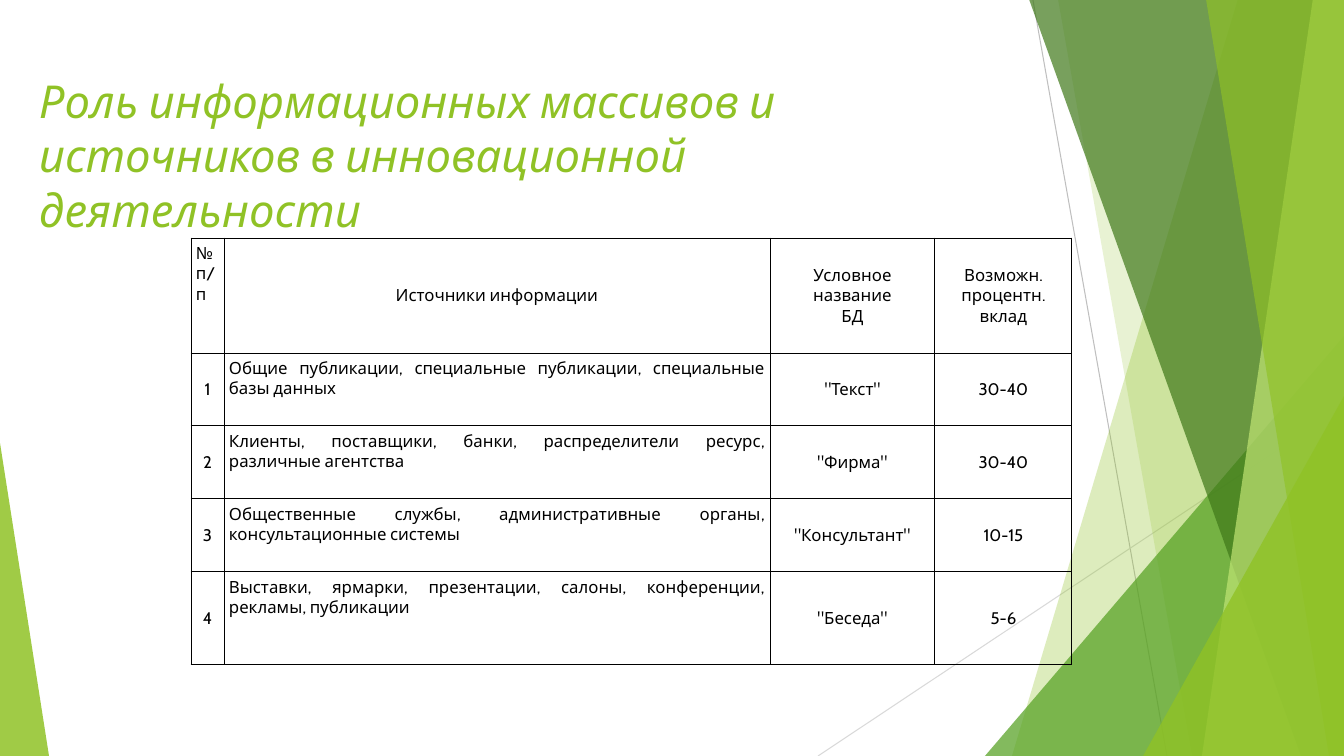
from lxml import etree
from pptx import Presentation
from pptx.dml.color import RGBColor
from pptx.enum.shapes import MSO_CONNECTOR, MSO_SHAPE
from pptx.enum.text import MSO_ANCHOR, PP_ALIGN
from pptx.oxml.ns import qn
from pptx.util import Emu, Pt

PX = 914400 / 100.8
WIDTH, HEIGHT = 1344, 756
FONT = "Cabin"
LEFT, CENTER, JUSTIFY = PP_ALIGN.LEFT, PP_ALIGN.CENTER, PP_ALIGN.JUSTIFY
TOP, MIDDLE = MSO_ANCHOR.TOP, MSO_ANCHOR.MIDDLE

COLORS = {
    "lime": "90C226", "green": "54A021", "dark": "3F7819", "pale": "C0E474",
    "gray": "BFBFBF", "light_gray": "D9D9D9", "black": "000000",
}

TITLE = "Роль информационных массивов и источников в инновационной деятельности"
TITLE_BOX = (29, 68, 993, 145)

SOURCES = [
    ("№\nп/п", "Источники информации", "Условное\nназвание\nБД", "Возможн.\nпроцентн.\nвклад"),
    ("1", "Общие публикации, специальные публикации, специальные базы данных",
     '"Текст"', "30-40"),
    ("2", "Клиенты, поставщики, банки, распределители ресурс, различные агентства",
     '"Фирма"', "30-40"),
    ("3", "Общественные службы, административные органы, консультационные системы",
     '"Консультант"', "10-15"),
    ("4", "Выставки, ярмарки, презентации, салоны, конференции, рекламы, публикации",
     '"Беседа"', "5-6"),
]
TABLE_AT = (191, 238)
COLUMN_WIDTHS = (33, 546, 165, 137)
ROW_HEIGHTS = (115, 73, 73, 73, 93)
CELL_INSET = 5

RAYS = [((1033, 0), (1167, 756), "gray"), ((1344, 406), (818, 756), "light_gray")]

# Blade: x at the top, x at the bottom; triangle: left, top, width, height, apex
FACETS = [
    ("blade", (1238, 1012), "lime", 30),
    ("blade", (1058, 1192), "lime", 20),
    ("triangle", (985, 336, 359, 420, 1), "green", 72),
    ("blade", (1029, 1301), "dark", 70),
    ("blade", (1313, 1202), "pale", 70),
    ("blade", (1206, 1329), "lime", 65),
    ("triangle", (1143, 396, 201, 360, 1), "lime", 80),
    ("triangle", (0, 443, 49, 313, 0), "lime", 85),
]


def px(*lengths):
    return [Emu(round(length * PX)) for length in lengths]


def rgb(name):
    return RGBColor.from_string(COLORS[name])


def write(frame, text, size, color, align=LEFT, italic=False):
    """Fill a text frame, one paragraph for each line of text."""
    frame.word_wrap = True
    for i, line in enumerate(text.split("\n")):
        paragraph = frame.add_paragraph() if i else frame.paragraphs[0]
        paragraph.alignment = align
        run = paragraph.add_run()
        run.text = line
        font = run.font
        font.name, font.size, font.italic = FONT, Pt(size), italic
        font.color.rgb = rgb(color)


def add_ray(shapes, start, end, color):
    ray = shapes.add_connector(MSO_CONNECTOR.STRAIGHT, *px(*start, *end))
    ray.line.color.rgb = rgb(color)
    ray.line.width = Pt(0.75)
    etree.SubElement(ray._element.spPr, qn("a:effectLst"))


def add_facet(shapes, kind, geometry, color, opacity):
    if kind == "blade":
        top_x, bottom_x = geometry
        outline = shapes.build_freeform(top_x, -1, scale=PX)
        outline.add_line_segments([(WIDTH, -1), (WIDTH, HEIGHT), (bottom_x, HEIGHT)])
        facet = outline.convert_to_shape()
    else:
        *box, apex = geometry
        facet = shapes.add_shape(MSO_SHAPE.ISOSCELES_TRIANGLE, *px(*box))
        facet.adjustments[0] = apex
    facet.shadow.inherit = False
    facet.line.fill.background()
    facet.fill.solid()
    facet.fill.fore_color.rgb = rgb(color)
    tint = facet._element.spPr.find(qn("a:solidFill"))[0]
    etree.SubElement(tint, qn("a:alpha"), val=str(opacity * 1000))


def add_borders(cell):
    """Draw the four sides; they must come before the fill in the cell properties."""
    properties = cell._tc.get_or_add_tcPr()
    for i, side in enumerate(("a:lnL", "a:lnR", "a:lnT", "a:lnB")):
        border = etree.Element(qn(side), w=str(Pt(0.75)))
        fill = etree.SubElement(border, qn("a:solidFill"))
        etree.SubElement(fill, qn("a:srgbClr"), val=COLORS["black"])
        properties.insert(i, border)


def add_sources(shapes):
    size = sum(COLUMN_WIDTHS), sum(ROW_HEIGHTS)
    table = shapes.add_table(len(SOURCES), len(COLUMN_WIDTHS), *px(*TABLE_AT, *size)).table
    table.first_row = table.horz_banding = False
    for column, width in zip(table.columns, px(*COLUMN_WIDTHS)):
        column.width = width
    for row, height in zip(table.rows, px(*ROW_HEIGHTS)):
        row.height = height
    inset = px(CELL_INSET)[0]
    for r, source in enumerate(SOURCES):
        for c, text in enumerate(source):
            cell = table.cell(r, c)
            justified = c == (1 if r else 0)
            cell.vertical_anchor = TOP if justified else MIDDLE
            cell.margin_left = cell.margin_right = inset
            cell.margin_top = cell.margin_bottom = inset
            cell.fill.background()
            add_borders(cell)
            write(cell.text_frame, text, 12, "black", align=JUSTIFY if justified else CENTER)


def main():
    presentation = Presentation()
    presentation.slide_width, presentation.slide_height = px(WIDTH, HEIGHT)
    shapes = presentation.slides.add_slide(presentation.slide_layouts[6]).shapes
    for ray in RAYS:
        add_ray(shapes, *ray)
    for facet in FACETS:
        add_facet(shapes, *facet)
    title = shapes.add_textbox(*px(*TITLE_BOX)).text_frame
    title.vertical_anchor = TOP
    write(title, TITLE, 32.4, "lime", italic=True)
    add_sources(shapes)
    presentation.save("out.pptx")


if __name__ == "__main__":
    main()
